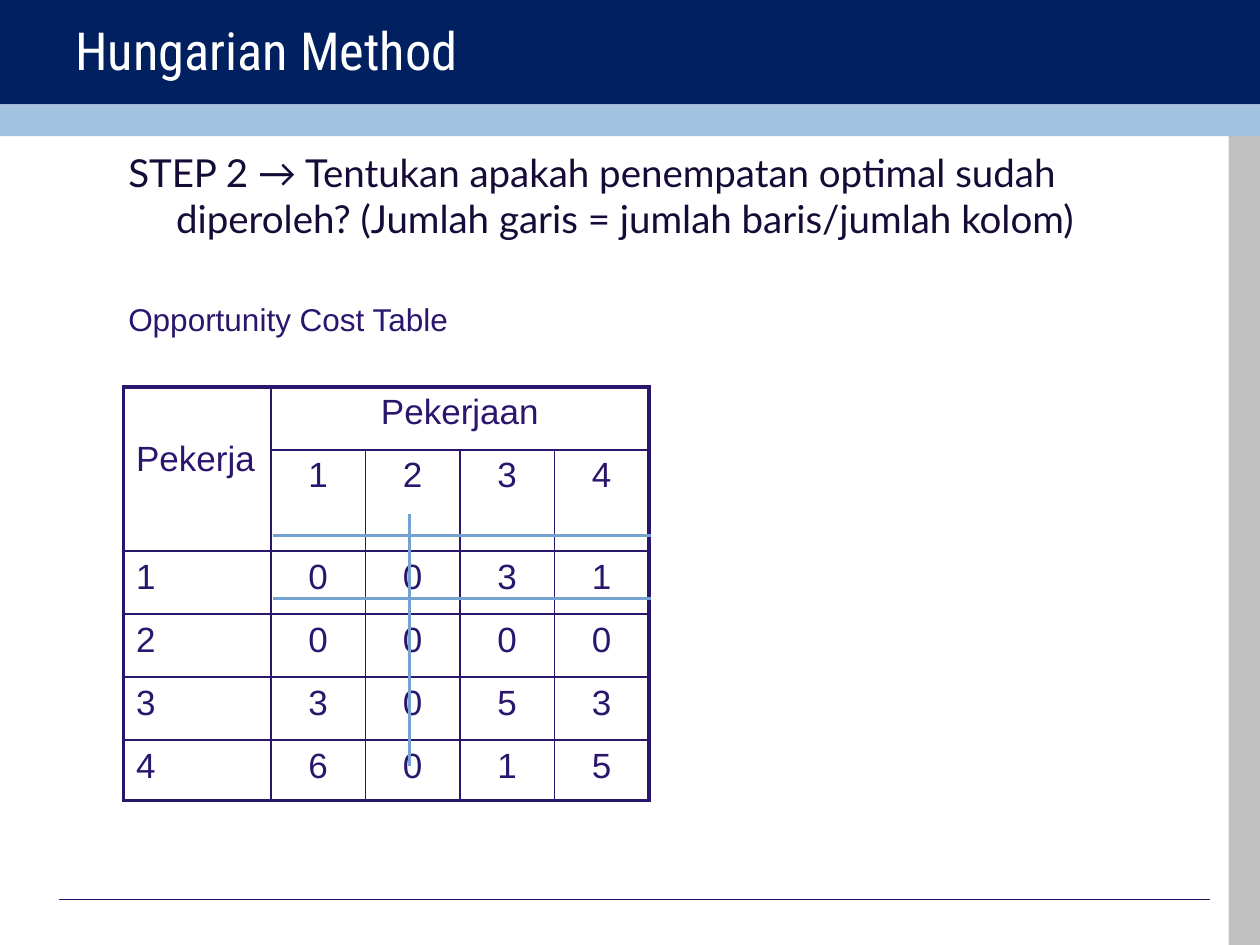
from lxml.etree import SubElement
from pptx import Presentation
from pptx.dml.color import RGBColor
from pptx.enum.shapes import MSO_CONNECTOR as Connector, MSO_SHAPE as Shape
from pptx.enum.text import MSO_ANCHOR as Anchor, PP_ALIGN as Align
from pptx.oxml.ns import qn
from pptx.util import Inches, Pt

WHITE = RGBColor(0xFF, 0xFF, 0xFF)
NAVY = RGBColor(0x00, 0x20, 0x60)
PALE_BLUE = RGBColor(0xA3, 0xC2, 0xE0)
GREY = RGBColor(0xC0, 0xC0, 0xC0)
PURPLE = RGBColor(0x2B, 0x16, 0x6E)
DARK_PURPLE = RGBColor(0x16, 0x0B, 0x37)
COVER_BLUE = RGBColor(0x75, 0xA3, 0xD1)

COLUMN_WIDTHS = [1.17] + [0.75] * 4
ROW_HEIGHTS = [0.5, 0.77, 0.5, 0.5, 0.5, 0.48]
COST_ROWS = [
    ["Pekerja", "Pekerjaan", "", "", ""],
    ["", "1", "2", "3", "4"],
    ["1", "0", "0", "3", "1"],
    ["2", "0", "0", "0", "0"],
    ["3", "3", "0", "5", "3"],
    ["4", "6", "0", "1", "5"],
]
COVER_LINES = [
    (2.17, 4.25, 5.17, 4.25),
    (2.17, 4.75, 5.17, 4.75),
    (3.25, 6.08, 3.25, 4.08),
]


def add_band(page, left, top, width, height, color):
    """Add a plain filled rectangle."""
    band = page.shapes.add_shape(
        Shape.RECTANGLE, Inches(left), Inches(top), Inches(width), Inches(height))
    band.shadow.inherit = False
    band.fill.solid()
    band.fill.fore_color.rgb = color
    band.line.fill.background()


def add_line(page, ends, color, width):
    """Add a straight line between two points."""
    line = page.shapes.add_connector(Connector.STRAIGHT, *map(Inches, ends))
    line.line.color.rgb = color
    line.line.width = Pt(width)
    SubElement(line._element.spPr, qn("a:effectLst"))


def add_span(para, text, size, font, color):
    """Add one formatted run to a paragraph."""
    span = para.add_run()
    span.text = text
    span.font.size = Pt(size)
    span.font.name = font
    span.font.color.rgb = color


def add_text(page, place, text, size, font, color, anchor=Anchor.TOP, wrap=True):
    """Add a text box and return its paragraph."""
    box = page.shapes.add_textbox(*map(Inches, place))
    box.text_frame.word_wrap = wrap
    box.text_frame.vertical_anchor = anchor
    para = box.text_frame.paragraphs[0]
    add_span(para, text, size, font, color)
    return para


def set_hanging_indent(para, indent):
    """Indent all lines of a paragraph but the first."""
    properties = para._p.get_or_add_pPr()
    properties.set("marL", str(Inches(indent)))
    properties.set("indent", str(-Inches(indent)))


def set_borders(cell, row, column):
    """Draw thick borders on the table's edge and thin ones inside."""
    last_row = row + (cell.span_height if cell.is_merge_origin else 1)
    last_column = column + (cell.span_width if cell.is_merge_origin else 1)
    outer = {
        "L": column == 0,
        "R": last_column == len(COLUMN_WIDTHS),
        "T": row == 0,
        "B": last_row == len(ROW_HEIGHTS),
    }
    properties = cell._tc.get_or_add_tcPr()
    for side, is_outer in outer.items():
        if cell.is_spanned and not is_outer:
            continue
        width = Pt(2.25 if is_outer else 1)
        border = SubElement(properties, qn(f"a:ln{side}"), w=str(width))
        fill = SubElement(border, qn("a:solidFill"))
        SubElement(fill, qn("a:srgbClr"), val=str(PURPLE))


def add_cost_table(page):
    """Add the opportunity cost table with its merged headings."""
    frame = page.shapes.add_table(
        len(ROW_HEIGHTS), len(COLUMN_WIDTHS), Inches(0.98), Inches(3.07),
        Inches(sum(COLUMN_WIDTHS)), Inches(sum(ROW_HEIGHTS)))
    table = frame.table
    table.first_row = False
    table.horz_banding = False
    for column, width in zip(table.columns, COLUMN_WIDTHS):
        column.width = Inches(width)
    for row, height in zip(table.rows, ROW_HEIGHTS):
        row.height = Inches(height)
    table.cell(0, 0).merge(table.cell(1, 0))
    table.cell(0, 1).merge(table.cell(0, 4))
    table.cell(0, 0).margin_top = Inches(0.42)
    for row, texts in enumerate(COST_ROWS):
        for column, text in enumerate(texts):
            cell = table.cell(row, column)
            set_borders(cell, row, column)
            cell.fill.background()
            if text:
                para = cell.text_frame.paragraphs[0]
                para.alignment = Align.CENTER if column else Align.LEFT
                add_span(para, text, 20, "Arial", PURPLE)


def main():
    """Build the slide and save the deck."""
    deck = Presentation()
    deck.slide_width, deck.slide_height = Inches(10), Inches(7.5)
    page = deck.slides.add_slide(deck.slide_layouts[6])
    add_band(page, 9.75, 1.07, 0.25, 6.43, GREY)
    add_line(page, (0.47, 7.14, 9.6, 7.14), PURPLE, 0.75)
    add_band(page, 0, 0, 10, 0.83, NAVY)
    add_band(page, 0, 0.83, 10, 0.25, PALE_BLUE)
    add_text(page, (0.5, 0.08, 6.75, 0.62), "Hungarian Method",
             30, "Roboto Condensed", WHITE, Anchor.MIDDLE)
    step = add_text(
        page, (0.92, 1.13, 8.33, 5.53),
        "STEP 2 → Tentukan apakah penempatan optimal sudah diperoleh? "
        "(Jumlah garis = jumlah baris/jumlah kolom)", 22, "Lato", DARK_PURPLE)
    set_hanging_indent(step, 0.38)
    add_cost_table(page)
    add_text(page, (0.92, 2.33, 2.77, 0.4), "Opportunity Cost Table",
             18, "Arial", PURPLE, wrap=False)
    for ends in COVER_LINES:
        add_line(page, ends, COVER_BLUE, 2.25)
    deck.save("out.pptx")


if __name__ == "__main__":
    main()
